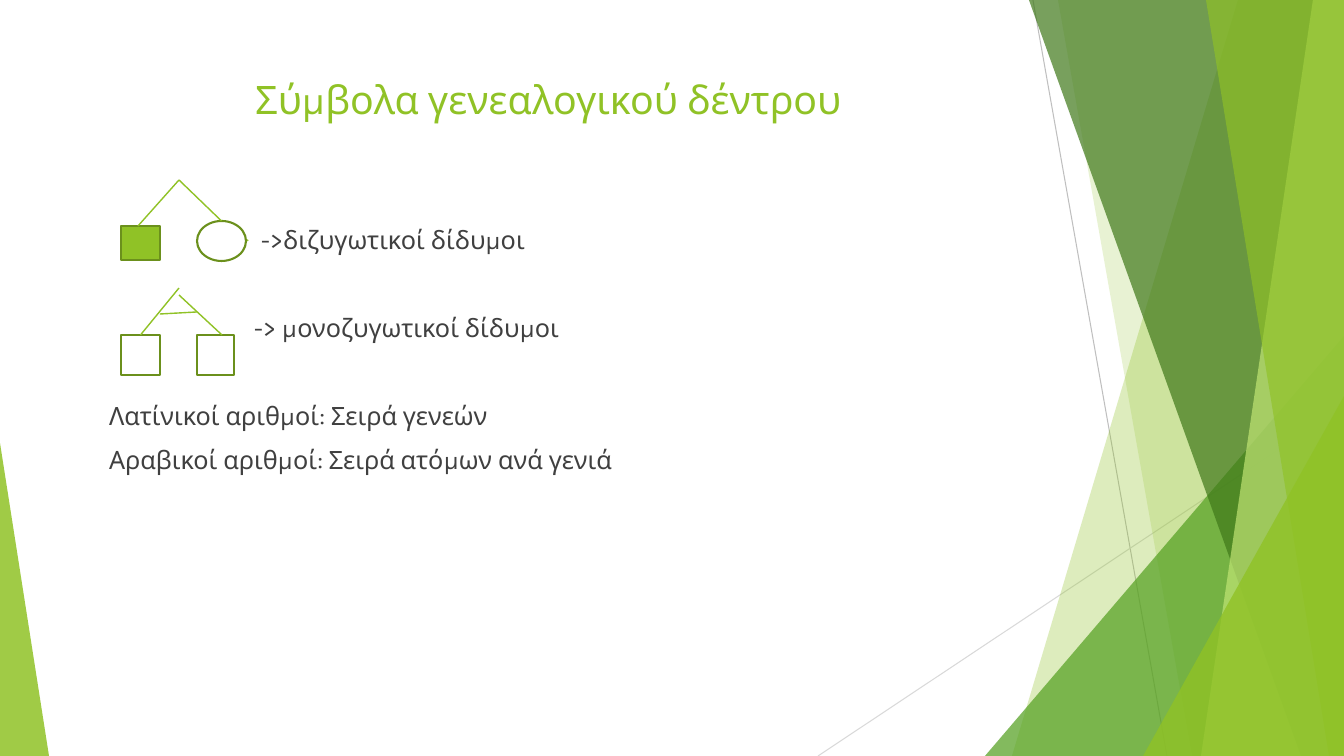
from pptx import Presentation, util as u
from pptx.dml.color import RGBColor
from pptx.enum import shapes, text
from pptx.oxml.ns import qn
from lxml import etree

PX = 914400 / 100.8  # EMU per px


class Theme:
    font = "Karla"
    green, dark, outline = "90C226", "404040", "6B901C"
    leaf, forest, lime, white = "54A021", "3F7819", "C0E474", "FFFFFF"
    grey, pale_grey = "BFBFBF", "D9D9D9"
    title_size, body_size = u.Pt(28), u.Pt(18)


def px(*lengths):
    return [round(length * PX) for length in lengths]


def add_line(start, end, color, width):
    line = slide.shapes.add_connector(shapes.MSO_CONNECTOR.STRAIGHT, *px(*start, *end))
    line.line.color.rgb = RGBColor.from_string(color)
    line.line.width = u.Pt(width)
    etree.SubElement(line._element.spPr, qn("a:effectLst"))
    return line


prs = Presentation()
prs.slide_width, prs.slide_height = px(1344, 756)
slide = prs.slides.add_slide(prs.slide_layouts[1])

# Title
title = slide.shapes.title
title.left, title.top, title.width, title.height = px(75, 67, 947, 64)
title.text_frame.text = "Σύμβολα γενεαλογικού δέντρου"
title.text_frame.vertical_anchor = text.MSO_ANCHOR.MIDDLE
title.text_frame.auto_size = text.MSO_AUTO_SIZE.NONE
heading = title.text_frame.paragraphs[0]
heading.alignment = text.PP_ALIGN.CENTER
heading.font.size = Theme.title_size
heading.font.name = Theme.font
heading.font.color.rgb = RGBColor.from_string(Theme.green)

# Legend: wording, left margin, hanging indent, space before in points
legend = [
    ("->διζυγωτικοί δίδυμοι", 176, -25, 0),
    ("-> μονοζυγωτικοί δίδυμοι", 169, 0, 41.4),
    ("Λατίνικοί αριθμοί: Σειρά γενεών", 24, 0, 41.4),
    ("Αραβικοί αριθμοί: Σειρά ατόμων ανά γενιά", 24, 0, 10),
]
body = slide.placeholders[1]
body.left, body.top, body.width, body.height = px(75, 131, 947, 535)
frame = body.text_frame
frame.auto_size = text.MSO_AUTO_SIZE.NONE
frame.vertical_anchor = text.MSO_ANCHOR.TOP
frame.margin_top = px(93)[0]
frame.text = "\n".join(entry[0] for entry in legend)
for entry, (_, margin, indent, gap) in zip(frame.paragraphs, legend):
    entry.level = 3
    entry.space_before = u.Pt(gap)
    props = entry._p.get_or_add_pPr()
    props.set("marL", str(px(margin)[0]))
    props.set("indent", str(px(indent)[0]))
    if indent:
        bullet_color = etree.SubElement(props, qn("a:buClr"))
        etree.SubElement(bullet_color, qn("a:srgbClr"), val=Theme.green)
        etree.SubElement(props, qn("a:buSzPct"), val="80000")
        etree.SubElement(props, qn("a:buChar"), char="▶")
    else:
        etree.SubElement(props, qn("a:buNone"))
    entry.font.size = Theme.body_size
    entry.font.name = Theme.font
    entry.font.color.rgb = RGBColor.from_string(Theme.dark)

# Thin rays behind the glass panes
add_line((1033, 0), (1167, 756), Theme.grey, 0.75)
add_line((1344, 406), (818, 756), Theme.pale_grey, 0.75)

# Panes reach the right edge: (top x, bottom x);
# triangles stand on the bottom edge: (left, top, width, apex side)
panes = [
    ((1238, 1012), Theme.green, 30),
    ((1058, 1192), Theme.green, 20),
    ((985, 336, 359, 1), Theme.leaf, 72),
    ((1029, 1301), Theme.forest, 70),
    ((1313, 1201), Theme.lime, 70),
    ((1206, 1329), Theme.green, 65),
    ((1143, 396, 201, 1), Theme.green, 80),
    ((0, 443, 49, 0), Theme.green, 85),
]
for outline, color, opacity in panes:
    if len(outline) == 2:
        top_x, bottom_x = outline
        builder = slide.shapes.build_freeform(top_x, 0, scale=PX)
        builder.add_line_segments([(1344, 0), (1344, 756), (bottom_x, 756)])
        pane = builder.convert_to_shape()
    else:
        left, top, width, apex = outline
        pane = slide.shapes.add_shape(shapes.MSO_SHAPE.ISOSCELES_TRIANGLE,
                                      *px(left, top, width, 756 - top))
        pane.adjustments[0] = apex
    pane.shadow.inherit = False
    pane.line.fill.background()
    pane.fill.solid()
    pane.fill.fore_color.rgb = RGBColor.from_string(color)
    tint = pane._element.spPr.find(qn("a:solidFill"))[0]
    etree.SubElement(tint, qn("a:alpha"), val=str(opacity * 1000))

# Family members
RECT, OVAL = shapes.MSO_SHAPE.RECTANGLE, shapes.MSO_SHAPE.OVAL
members = []
for kind, box, color in [
    (RECT, (121, 226, 39, 34), Theme.green),
    (OVAL, (197, 221, 49, 40), Theme.white),
    (RECT, (121, 335, 39, 40), Theme.white),
    (RECT, (197, 335, 37, 40), Theme.white),
]:
    member = slide.shapes.add_shape(kind, *px(*box))
    member.shadow.inherit = False
    member.fill.solid()
    member.fill.fore_color.rgb = RGBColor.from_string(color)
    member.line.color.rgb = RGBColor.from_string(Theme.outline)
    member.line.width = u.Pt(1.5)
    members.append(member)
_, fraternal_sister, identical_left, _ = members

# Descent lines, with the bar that marks identical twins
for start, end, child in [
    ((138, 226), (179, 180), None),
    ((222, 221), (179, 180), fraternal_sister),
    ((140, 335), (179, 288), identical_left),
    ((222, 335), (179, 295), None),
    ((160, 314), (197, 312), None),
]:
    descent = add_line(start, end, Theme.green, 1)
    if child is not None:
        descent.begin_connect(child, 0)

prs.save("out.pptx")
